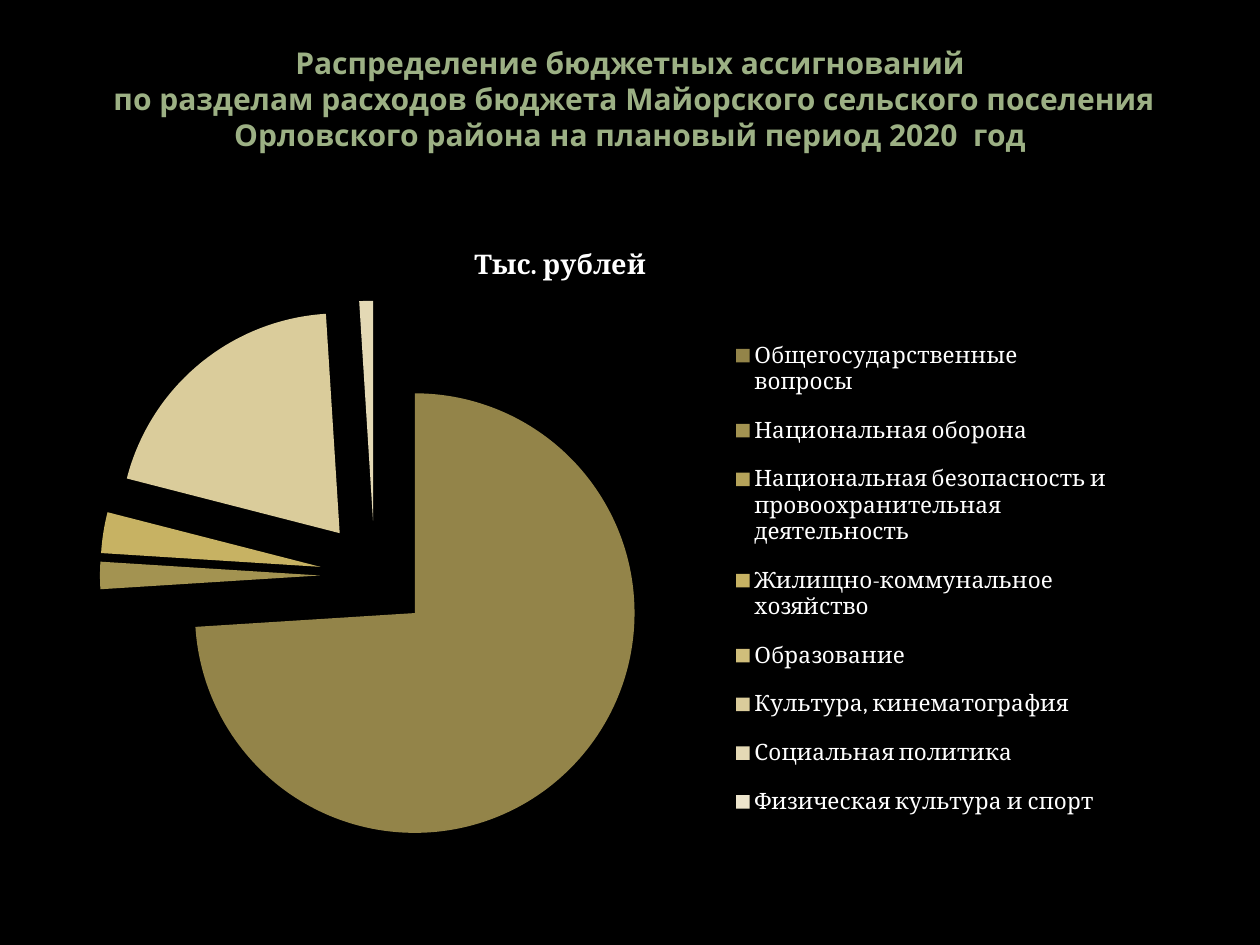
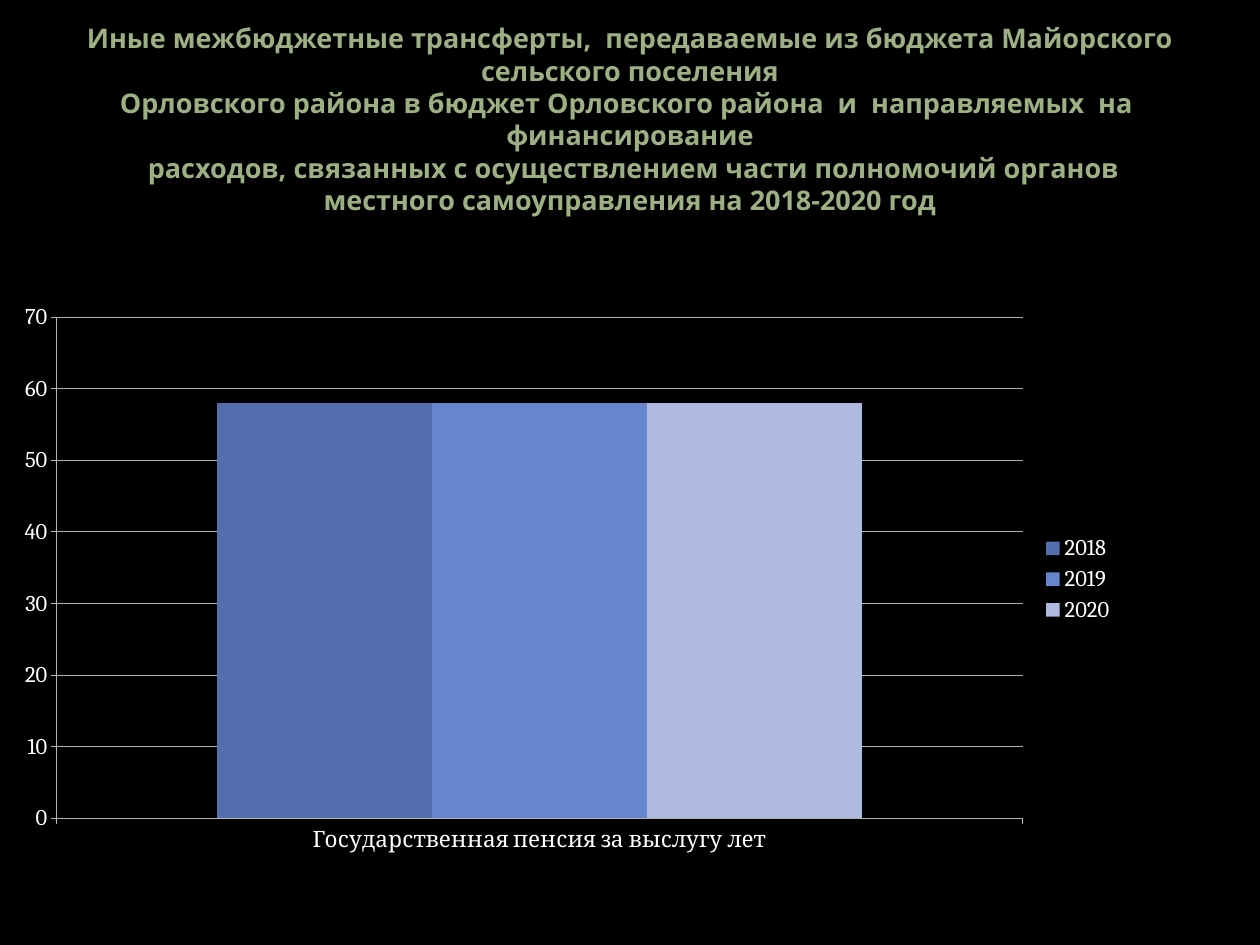
from lxml import etree
from pptx import Presentation
from pptx import util as u
from pptx.chart.data import CategoryChartData
from pptx.dml.color import RGBColor
from pptx.enum import chart as ch
from pptx.enum import text
from pptx.oxml.ns import qn

COLOURS = {"background": "000000", "title": "9CB084", "label": "FFFFFF", "grid": "B3B3B3"}
SECTION_COLOURS = ["938449", "A39351", "B5A35A", "C7B263",
                   "D0BE7B", "DACC9B", "E4D9B5", "EDE5CC"]
YEAR_COLOURS = ["546EAD", "6585CF", "AFBAE1"]
TITLE_FONT, CHART_FONT = "Open Sans", "Cambria"

SECTIONS = {
    "Общегосударственные вопросы": 74,
    "Национальная оборона": 2,
    "Национальная безопасность и провоохранительная деятельность": 0,
    "Жилищно-коммунальное хозяйство": 3,
    "Образование": 0,
    "Культура, кинематография": 20,
    "Социальная политика": 1,
    "Физическая культура и спорт": 0,
}
TRANSFERS = {"2018": 58, "2019": 58, "2020": 58}


def rgb(name):
    return RGBColor.from_string(COLOURS[name])


def fill_solid(fill, colour):
    fill.solid()
    fill.fore_color.rgb = RGBColor.from_string(colour)


def add_titled_slide(deck, lines, size, height):
    slide = deck.slides.add_slide(deck.slide_layouts[5])
    fill_solid(slide.background.fill, COLOURS["background"])
    title = slide.shapes.title
    title.left, title.top = u.Inches(0.7), u.Inches(0.42)
    title.width, title.height = u.Inches(12.6), u.Inches(height)

    frame = title.text_frame
    frame.text = "\v".join(lines)
    frame.auto_size = text.MSO_AUTO_SIZE.NONE
    frame.word_wrap = True
    frame.vertical_anchor = text.MSO_ANCHOR.BOTTOM
    line_height = u.Pt(size * 1.2)
    frame.margin_left = frame.margin_right = u.Inches(0.14)
    frame.margin_top = u.Inches(0.07)
    frame.margin_bottom = u.Inches(0.07) + line_height
    para = frame.paragraphs[0]
    para.alignment = text.PP_ALIGN.CENTER
    para.line_spacing = line_height
    for span in para.runs:
        font = span.font
        font.name, font.size, font.bold = TITLE_FONT, u.Pt(size), True
        font.color.rgb = rgb("title")
    return slide


def set_layout(element, index, box, inner=False):
    """Place a chart part by fractions (x, y, w, h) of the chart area."""
    for old in element.findall(qn("c:layout")):
        element.remove(old)
    layout = etree.Element(qn("c:layout"))
    manual = etree.SubElement(layout, qn("c:manualLayout"))
    settings = [("layoutTarget", "inner")] if inner else []
    settings += [("xMode", "edge"), ("yMode", "edge")]
    settings += zip("xywh", box)
    for tag, value in settings:
        etree.SubElement(manual, qn(f"c:{tag}")).set("val", str(value))
    element.insert(index, layout)


def add_budget_chart(slide, kind, data, box, plot_box):
    frame = slide.shapes.add_chart(kind, *map(u.Inches, box), data)
    chart = frame.chart
    chart.font.name, chart.font.size = CHART_FONT, u.Pt(18)
    chart.font.color.rgb = rgb("label")
    chart.has_title = False
    chart.has_legend = True
    chart.legend.position = ch.XL_LEGEND_POSITION.RIGHT
    chart.legend.include_in_layout = False
    plot_area = chart.element.find(".//" + qn("c:plotArea"))
    set_layout(plot_area, 0, plot_box, inner=True)
    return chart


def add_sections_pie(slide, box):
    data = CategoryChartData()
    data.categories = list(SECTIONS)
    data.add_series("Тыс. рублей", list(SECTIONS.values()))
    chart = add_budget_chart(slide, ch.XL_CHART_TYPE.PIE, data, box,
                             (0.09, 0.12, 0.49, 0.86))
    set_layout(chart.legend._element, 1, (0.66, 0.15, 0.33, 0.81))

    chart.has_title = True
    chart.chart_title.include_in_layout = False
    heading = chart.chart_title.text_frame
    heading.text = "Тыс. рублей"
    font = heading.paragraphs[0].runs[0].font
    font.name, font.size, font.bold = CHART_FONT, u.Pt(21.6), True
    font.color.rgb = rgb("label")

    plot = chart.plots[0]
    plot.vary_by_categories = True
    series = plot.series[0]
    explosion = etree.Element(qn("c:explosion"), val="25")
    series._element.find(qn("c:tx")).addnext(explosion)
    for index, colour in enumerate(SECTION_COLOURS):
        fill_solid(series.points[index].format.fill, colour)


def add_transfers_columns(slide, box):
    data = CategoryChartData()
    data.categories = ["Государственная пенсия за выслугу лет"]
    for year, amount in TRANSFERS.items():
        data.add_series(year, [amount])
    chart = add_budget_chart(slide, ch.XL_CHART_TYPE.COLUMN_CLUSTERED, data, box,
                             (0.05, 0.04, 0.86, 0.88))
    plot = chart.plots[0]
    plot.vary_by_categories = False
    plot.gap_width, plot.overlap = 150, 0
    for series, colour in zip(plot.series, YEAR_COLOURS):
        fill_solid(series.format.fill, colour)

    amounts = chart.value_axis
    amounts.minimum_scale, amounts.maximum_scale, amounts.major_unit = 0, 70, 10
    amounts.has_major_gridlines = True
    for axis in (amounts, chart.category_axis):
        axis.major_tick_mark = ch.XL_TICK_MARK.OUTSIDE
    for part in (amounts, chart.category_axis, amounts.major_gridlines):
        part.format.line.color.rgb = rgb("grid")
        part.format.line.width = u.Pt(0.75)


def main():
    deck = Presentation()
    deck.slide_width, deck.slide_height = u.Inches(14), u.Inches(10.5)

    sections = add_titled_slide(deck, [
        "Распределение бюджетных ассигнований",
        " по разделам расходов бюджета Майорского сельского поселения "
        "Орловского района на плановый период 2020  год",
    ], size=24, height=1.75)
    add_sections_pie(sections, (-0.02, 2.49, 12.49, 7.1))

    transfers = add_titled_slide(deck, [
        "Иные межбюджетные трансферты,  передаваемые из бюджета Майорского "
        "сельского поселения",
        "Орловского района в бюджет Орловского района  и  направляемых  на  "
        "финансирование",
        " расходов, связанных с осуществлением части полномочий органов "
        "местного самоуправления на 2018-2020 год",
    ], size=21.6, height=2.41)
    add_transfers_columns(transfers, (0, 3.27, 12.49, 6.33))

    deck.save("out.pptx")


if __name__ == "__main__":
    main()
